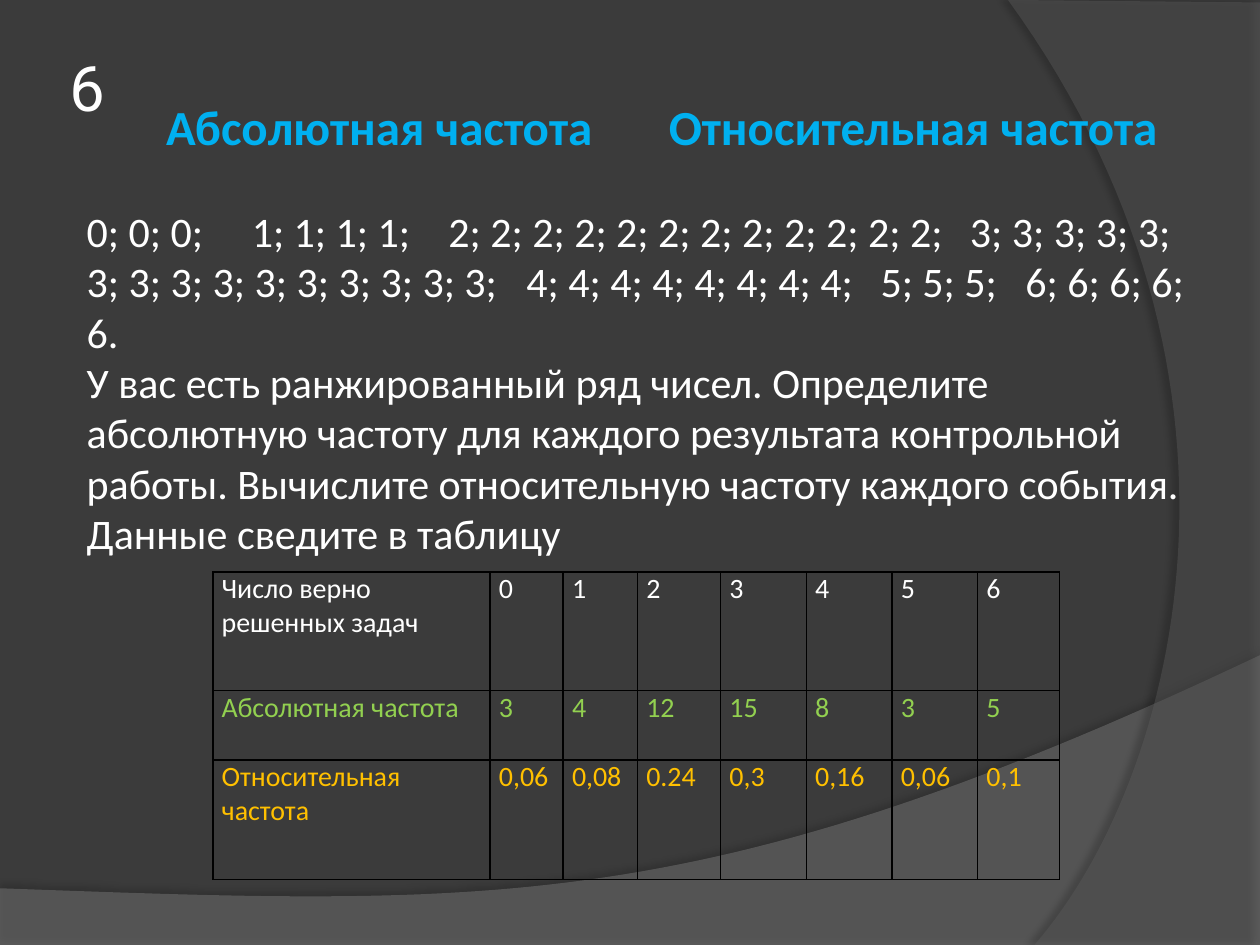
from dataclasses import dataclass
from typing import NamedTuple

from lxml.etree import SubElement
from pptx import Presentation
from pptx.dml.color import RGBColor
from pptx.enum.text import MSO_ANCHOR
from pptx.oxml.ns import qn
from pptx.util import Emu, Pt

EMU_PER_PX = 9144  # 100 px to the inch


@dataclass(frozen=True)
class Theme:
    background: str = "3B3B3B"
    wave: str = "7F7F7F"
    arc: str = "5E5E5E"
    black: str = "000000"
    white: str = "FFFFFF"
    heading: str = "00B0F0"
    absolute: str = "92D050"
    relative: str = "FFC000"
    font: str = "Calibri"
    number_font: str = "Roboto"
    number_size: int = 36
    heading_size: int = 28
    body_size: int = 24
    table_size: int = 16


THEME = Theme()


class Box(NamedTuple):
    left: int
    top: int
    width: int
    height: int


class Shadow(NamedTuple):
    opacity: int
    blur: float
    distance: float
    angle: int


@dataclass(frozen=True)
class Backdrop:
    color: str
    opacity: int
    corners: list  # straight outline, ending where the curve begins
    curve: list  # two control points and the end point
    shadow: Shadow


@dataclass(frozen=True)
class TextLine:
    text: str
    size: int
    color: str
    bold: bool = False
    font: str = THEME.font
    tabs: tuple = ()
    format: tuple = ()  # pairs of paragraph attribute and value


def px(value: float) -> Emu:
    return Emu(round(value * EMU_PER_PX))


def rgb(color: str) -> RGBColor:
    return RGBColor.from_string(color)


def apply(target, values: dict) -> None:
    for name, value in values.items():
        setattr(target, name, value)


def add_alpha(color_element, percent: int) -> None:
    SubElement(color_element, qn("a:alpha"), val=str(percent * 1000))


def bezier(start: tuple, controls: list, steps: int = 60) -> list:
    points = [start, *controls]
    weights = (1, 3, 3, 1)
    return [
        tuple(
            sum(w * (1 - t) ** (3 - i) * t**i * point[axis]
                for i, (w, point) in enumerate(zip(weights, points)))
            for axis in (0, 1)
        )
        for t in (step / steps for step in range(1, steps + 1))
    ]


def draw_backdrop(slide, backdrop: Backdrop) -> None:
    outline = backdrop.corners + bezier(backdrop.corners[-1], backdrop.curve)
    points = [(px(x), px(y)) for x, y in outline]
    builder = slide.shapes.build_freeform(*points[0], scale=1.0)
    builder.add_line_segments(points[1:], close=True)
    shape = builder.convert_to_shape()
    shape.fill.solid()
    shape.fill.fore_color.rgb = rgb(backdrop.color)
    shape.line.fill.background()
    shape.shadow.inherit = False
    properties = shape.element.spPr
    add_alpha(properties.find(qn("a:solidFill")).find(qn("a:srgbClr")), backdrop.opacity)
    shadow = SubElement(
        properties.find(qn("a:effectLst")), qn("a:outerShdw"),
        blurRad=str(Pt(backdrop.shadow.blur)), dist=str(Pt(backdrop.shadow.distance)),
        dir=str(backdrop.shadow.angle * 60000), algn="ctr", rotWithShape="0",
    )
    add_alpha(SubElement(shadow, qn("a:srgbClr"), val=THEME.black), backdrop.shadow.opacity)


def write_line(paragraph, line: TextLine) -> None:
    run = paragraph.add_run()
    run.text = line.text
    apply(run.font, {"size": Pt(line.size), "name": line.font, "bold": line.bold})
    run.font.color.rgb = rgb(line.color)
    apply(paragraph, dict(line.format))
    if line.tabs:
        stops = SubElement(paragraph._p.get_or_add_pPr(), qn("a:tabLst"))
        for position in line.tabs:
            SubElement(stops, qn("a:tab"), pos=str(px(position)), algn="l")


def draw_text(slide, box: Box, lines: list, frame_format: dict) -> None:
    frame = slide.shapes.add_textbox(*map(px, box)).text_frame
    apply(frame, {"word_wrap": True, **frame_format})
    for index, line in enumerate(lines):
        write_line(frame.add_paragraph() if index else frame.paragraphs[0], line)


def draw_borders(cell) -> None:
    properties = cell._tc.get_or_add_tcPr()
    for index, side in enumerate(("lnL", "lnR", "lnT", "lnB")):
        border = properties.makeelement(qn(f"a:{side}"), {"w": str(Pt(1))})
        properties.insert(index, border)
        SubElement(SubElement(border, qn("a:solidFill")), qn("a:srgbClr"), val=THEME.black)


def draw_table(slide, box: Box, widths: list, heights: list, rows: list) -> None:
    table = slide.shapes.add_table(len(rows), len(widths), *map(px, box)).table
    apply(table, {"first_row": False, "horz_banding": False})
    for column, width in zip(table.columns, widths):
        column.width = px(width)
    for row, height, (color, *texts) in zip(table.rows, heights, rows):
        row.height = px(height)
        for cell, text in zip(row.cells, texts):
            apply(cell, {"margin_left": px(7), "margin_right": px(7),
                         "margin_top": 0, "margin_bottom": 0})
            cell.fill.background()
            write_line(cell.text_frame.paragraphs[0], TextLine(text, THEME.table_size, color))
            draw_borders(cell)


BACKDROPS = [
    Backdrop(THEME.wave, 45, [(0, 705), (0, 751), (1000, 751), (1000, 520)],
             [(559, 729), (391, 719), (0, 705)], Shadow(35, 4, 3.5, 270)),
    Backdrop(THEME.arc, 40, [(1000, 2), (1000, 750), (821, 750)],
             [(935, 619), (1018, 300), (800, 0)], Shadow(45, 4, 4, 180)),
]

# Each result with its absolute frequency
COUNTS = {0: 3, 1: 4, 2: 12, 3: 15, 4: 8, 5: 3, 6: 5}
SERIES = "\t".join(" ".join([f"{result};"] * count) for result, count in COUNTS.items())

BODY_SPACING = ("line_spacing", Pt(28.75))
TASK_LINES = [
    TextLine("\tАбсолютная частота\tОтносительная частота", THEME.heading_size,
             THEME.heading, bold=True, tabs=(63, 462)),
    TextLine(SERIES[:-1] + ".", THEME.body_size, THEME.white,
             tabs=(131, 287, 349, 630, 701, 745),
             format=(BODY_SPACING, ("space_before", Pt(28.5)))),
    TextLine("У вас есть ранжированный ряд чисел. Определите абсолютную частоту для каждого "
             "результата контрольной работы. Вычислите относительную частоту каждого события. "
             "Данные сведите в таблицу", THEME.body_size, THEME.white, format=(BODY_SPACING,)),
]

TABLE_ROWS = [
    (THEME.white, "Число верно решенных задач", *map(str, COUNTS)),
    (THEME.absolute, "Абсолютная частота", *map(str, COUNTS.values())),
    (THEME.relative, "Относительная частота",
     "0,06", "0,08", "0.24", "0,3", "0,16", "0,06", "0,1"),
]


def main() -> None:
    presentation = Presentation()
    apply(presentation, {"slide_width": px(1000), "slide_height": px(750)})
    slide = presentation.slides.add_slide(presentation.slide_layouts[6])
    slide.background.fill.solid()
    slide.background.fill.fore_color.rgb = rgb(THEME.background)

    # Backdrop curves
    for backdrop in BACKDROPS:
        draw_backdrop(slide, backdrop)

    # Frequency table
    draw_table(slide, Box(169, 454, 672, 244), [220, 58, 59, 66, 68, 68, 68, 65],
               [94, 55, 95], TABLE_ROWS)

    # Task text and slide number
    draw_text(slide, Box(59, 21, 906, 468), TASK_LINES, {"margin_top": px(56)})
    margins = {f"margin_{side}": px(5) for side in ("left", "right", "top", "bottom")}
    number = TextLine("6", THEME.number_size, THEME.white, font=THEME.number_font)
    draw_text(slide, Box(50, 30, 56, 77), [number],
              {"vertical_anchor": MSO_ANCHOR.MIDDLE, **margins})

    presentation.save("out.pptx")


if __name__ == "__main__":
    main()
